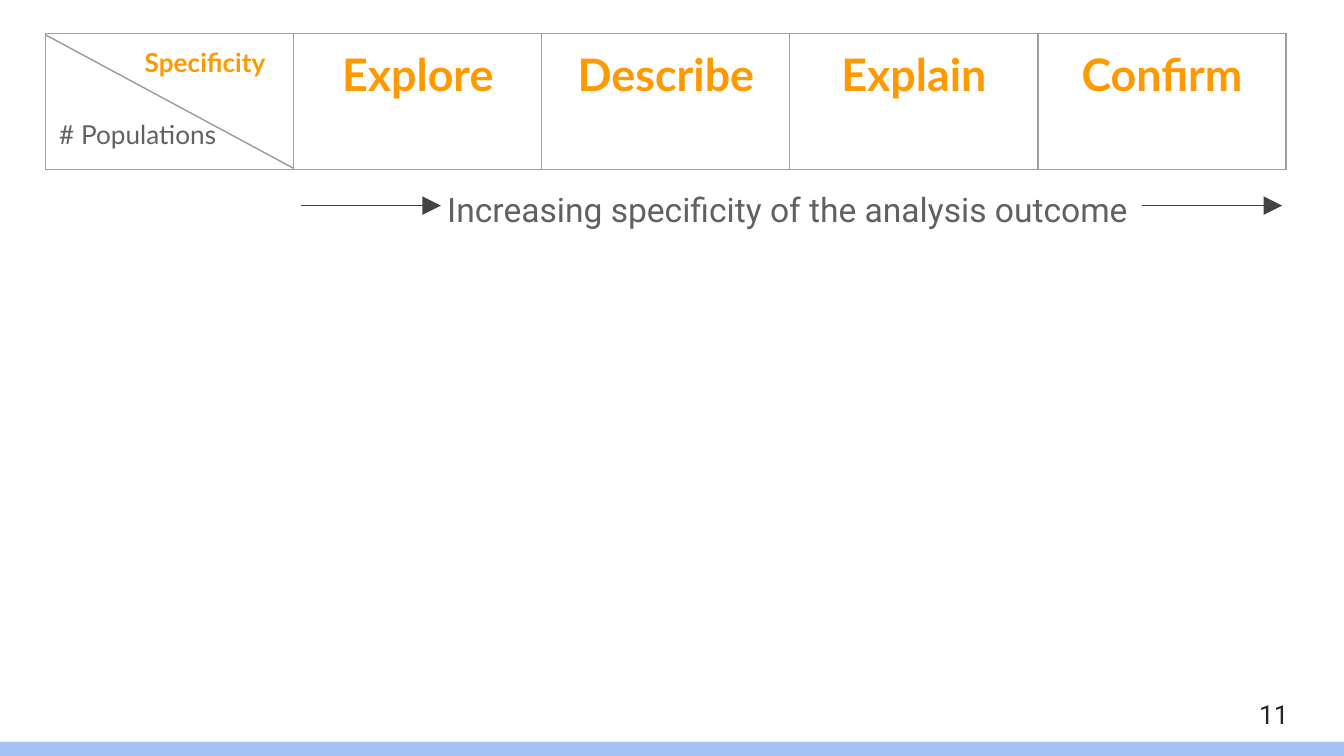
from pptx import Presentation
from pptx.util import Inches, Pt
from pptx.dml.color import RGBColor
from pptx.enum.shapes import MSO_SHAPE as Shape, MSO_CONNECTOR as Conn
from pptx.enum.text import PP_ALIGN as Align, MSO_ANCHOR as Anchor
from pptx.oxml import parse_xml
from pptx.oxml.ns import nsdecls

ORANGE, GRAY = "FF9900", "616161"


def write(par, text, size=14, font="Lato", color=GRAY, bold=False,
          align=Align.LEFT):
    par.alignment = align
    run = par.add_run()
    run.text = text
    run.font.size, run.font.name, run.font.bold = Pt(size), font, bold
    run.font.color.rgb = RGBColor.from_string(color)


def rule(x1, y1, x2, y2, color, arrow=False):
    line = slide.shapes.add_connector(
        Conn.STRAIGHT, Inches(x1), Inches(y1), Inches(x2), Inches(y2))
    line.line.color.rgb = RGBColor.from_string(color)
    line.line.width = Pt(0.75)
    if arrow:
        line.line._get_or_add_ln().append(parse_xml(
            f'<a:tailEnd {nsdecls("a")} type="triangle" w="lg" len="lg"/>'))
    line._element.spPr.append(parse_xml(f'<a:effectLst {nsdecls("a")}/>'))


# Widescreen slide, 16 to 9
deck = Presentation()
deck.slide_width, deck.slide_height = Inches(10), Inches(10 * 9 / 16)
slide = deck.slides.add_slide(deck.slide_layouts[6])

# Bottom bar
bar = slide.shapes.add_shape(
    Shape.RECTANGLE, 0, Inches(5.52), Inches(10), Inches(0.11))
bar.shadow.inherit = False
bar.fill.solid()
bar.fill.fore_color.rgb = RGBColor.from_string("A4C2F4")
bar.line.fill.background()

# Caption and page number: place, left inset, text, format
notes = [
    ((0.34, 1.26, 9.32, 4.36), 1.82, Anchor.TOP,
     "Increasing specificity of the analysis outcome",
     dict(size=18, align=Align.CENTER)),
    ((9.27, 5.1, 0.6, 0.43), 0.1, Anchor.MIDDLE, "11", dict(color="202729")),
]
for place, inset, anchor, text, form in notes:
    box = slide.shapes.add_textbox(*[Inches(v) for v in place])
    frame = box.text_frame
    frame.word_wrap = True
    frame.vertical_anchor = anchor
    frame.margin_left = Inches(inset)
    frame.margin_right = frame.margin_top = frame.margin_bottom = Inches(0.1)
    write(frame.paragraphs[0], text, font="Roboto", **form)
    if anchor == Anchor.TOP:
        frame.paragraphs[0].line_spacing = 1.15

# Header table
heads = ["Specificity", "Explore", "Describe", "Explain", "Confirm"]
span = 9.23
table = slide.shapes.add_table(
    1, len(heads), Inches(0.34), Inches(0.25),
    Inches(span), Inches(1.01)).table
table.first_row = table.horz_banding = False
for col, head in enumerate(heads):
    table.columns[col].width = Inches(span / len(heads))
    cell = table.cell(0, col)
    cell.margin_left = cell.margin_right = Inches(0.1)
    cell.margin_top = cell.margin_bottom = Inches(0.1)
    props = cell._tc.get_or_add_tcPr()
    for side in "LRTB":
        props.append(parse_xml(
            f'<a:ln{side} {nsdecls("a")} w="9525"><a:solidFill>'
            f'<a:srgbClr val="9E9E9E"/></a:solidFill></a:ln{side}>'))
    cell.fill.background()
    first = cell.text_frame.paragraphs[0]
    if col:
        write(first, head, size=24, color=ORANGE, bold=True,
              align=Align.CENTER)
    else:
        cell.margin_right = Inches(0.21)
        write(first, head, color=ORANGE, bold=True, align=Align.RIGHT)
        below = cell.text_frame.add_paragraph()
        below.space_before = Pt(21.5)
        write(below, "# Populations")

# Corner diagonal and arrows beside the caption
rule(0.34, 0.26, 2.18, 1.25, "999999")
for left in (2.24, 8.5):
    rule(left, 1.53, left + 1.04, 1.53, "434343", arrow=True)

deck.save("out.pptx")
